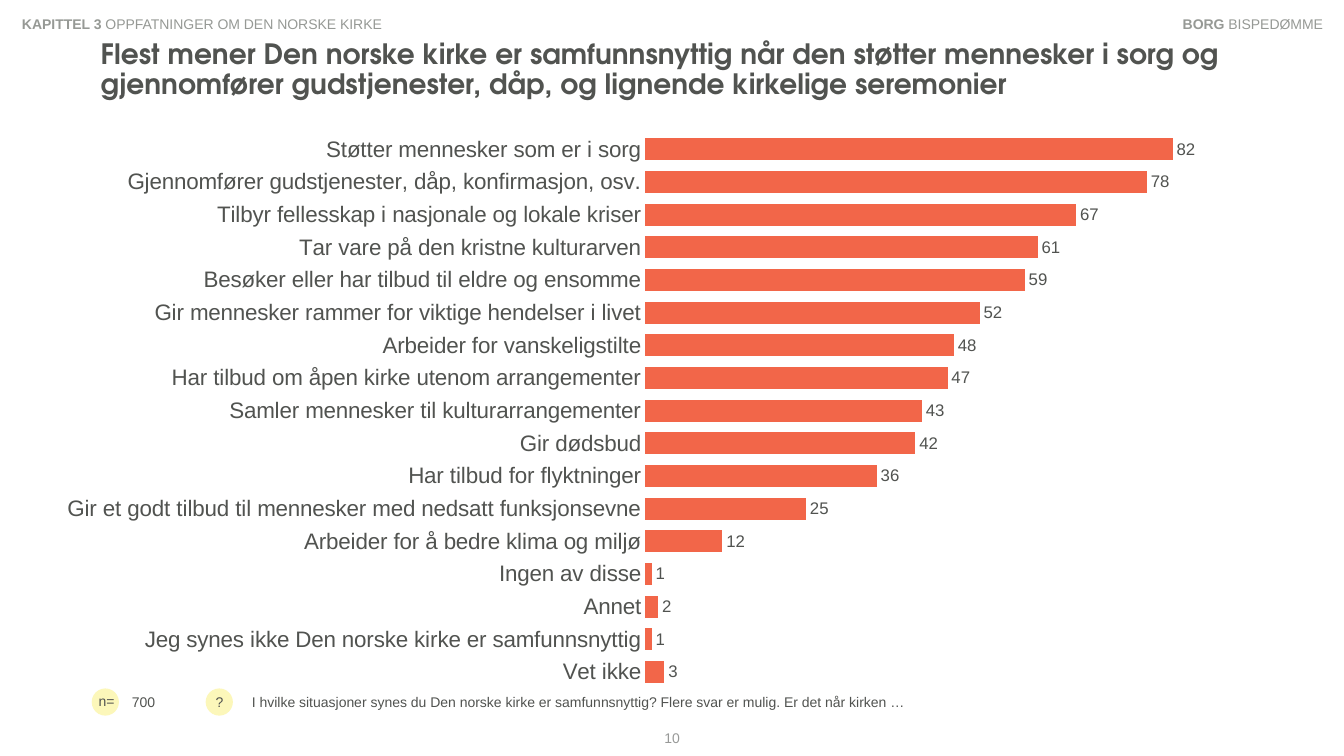
from lxml import etree
from pptx import Presentation
from pptx.chart.data import CategoryChartData as ChartData
from pptx.dml.color import RGBColor
from pptx.enum.chart import XL_CHART_TYPE as Kind, XL_LABEL_POSITION as Spot, XL_TICK_MARK as Tick
from pptx.enum.shapes import MSO_SHAPE as Shape
from pptx.enum.text import MSO_ANCHOR as Anchor, PP_ALIGN as Align
from pptx.oxml.ns import qn
from pptx.util import Inches, Pt

DARK = RGBColor(0x51, 0x53, 0x50)
GREY = RGBColor(0x96, 0x99, 0x95)
PALE = RGBColor(0x98, 0x99, 0x98)
CORAL = RGBColor(0xF2, 0x66, 0x49)
CREAM = RGBColor(0xFC, 0xF7, 0xBA)

answers = [
    ("Støtter mennesker som er i sorg", 82),
    ("Gjennomfører gudstjenester, dåp, konfirmasjon, osv.", 78),
    ("Tilbyr fellesskap i nasjonale og lokale kriser", 67),
    ("Tar vare på den kristne kulturarven", 61),
    ("Besøker eller har tilbud til eldre og ensomme", 59),
    ("Gir mennesker rammer for viktige hendelser i livet", 52),
    ("Arbeider for vanskeligstilte", 48),
    ("Har tilbud om åpen kirke utenom arrangementer", 47),
    ("Samler mennesker til kulturarrangementer", 43),
    ("Gir dødsbud", 42),
    ("Har tilbud for flyktninger", 36),
    ("Gir et godt tilbud til mennesker med nedsatt funksjonsevne", 25),
    ("Arbeider for å bedre klima og miljø", 12),
    ("Ingen av disse", 1),
    ("Annet", 2),
    ("Jeg synes ikke Den norske kirke er samfunnsnyttig", 1),
    ("Vet ikke", 3),
]

deck = Presentation()
deck.slide_width, deck.slide_height = Inches(13.33), Inches(7.5)
slide = deck.slides.add_slide(deck.slide_layouts[6])


def style(font, size, color=DARK, face="Arial", bold=False):
    font.size, font.name, font.bold = Pt(size), face, bold
    font.color.rgb = color


def write(text, left, top, width, height, lead="", size=10, color=DARK, face="Arial",
          bold=False, align=Align.LEFT, anchor=Anchor.TOP, lines=1.0):
    frame = slide.shapes.add_textbox(
        Inches(left), Inches(top), Inches(width), Inches(height)).text_frame
    frame.word_wrap = True
    frame.vertical_anchor = anchor
    para = frame.paragraphs[0]
    para.alignment, para.line_spacing = align, lines
    for part, heavy in ((lead, True), (text, bold)):
        if part:
            run = para.add_run()
            run.text = part
            style(run.font, size, color, face, heavy)


for left in (0.91, 2.04):
    dot = slide.shapes.add_shape(
        Shape.OVAL, Inches(left), Inches(6.83), Inches(0.27), Inches(0.27))
    dot.shadow.inherit = False
    dot.fill.solid()
    dot.fill.fore_color.rgb = CREAM
    dot.line.fill.background()

write("n=", 0.88, 6.82, 0.45, 0.27)
write("?", 2.04, 6.83, 0.3, 0.27)

data = ChartData(number_format="0")
data.categories = [name for name, share in answers]
data.add_series("Series 1", [share for name, share in answers])
chart = slide.shapes.add_chart(
    Kind.BAR_CLUSTERED, Inches(0.39), Inches(1.32), Inches(12.39), Inches(5.51), data).chart
chart.has_legend = chart.has_title = False
style(chart.font, 14)

names = chart.category_axis
names.reverse_order = True
names.major_tick_mark = names.minor_tick_mark = Tick.NONE
names.format.line.fill.background()
style(names.tick_labels.font, 16)

scale = chart.value_axis
scale.minimum_scale, scale.maximum_scale, scale.major_unit = 0, 100, 20
scale.has_major_gridlines = False
scale.visible = False

plot = chart.plots[0]
plot.gap_width = 50
plot.vary_by_categories = False
bars = plot.series[0]
bars.format.fill.solid()
bars.format.fill.fore_color.rgb = CORAL
labels = bars.data_labels
labels.show_value = True
labels.position = Spot.OUTSIDE_END
labels.number_format, labels.number_format_is_linked = "0", False
style(labels.font, 12)

area = chart._chartSpace.chart.plotArea
for old in area.findall(qn("c:layout")):
    area.remove(old)
layout = etree.Element(qn("c:layout"))
area.insert(0, layout)
manual = etree.SubElement(layout, qn("c:manualLayout"))
for tag, val in (("layoutTarget", "inner"), ("xMode", "edge"), ("yMode", "edge"),
                 ("x", 0.485), ("y", 0), ("w", 0.515), ("h", 1)):
    etree.SubElement(manual, qn("c:" + tag)).set("val", str(val))

write("Flest mener Den norske kirke er samfunnsnyttig når den støtter mennesker i sorg og "
      "gjennomfører gudstjenester, dåp, og lignende kirkelige seremonier",
      0.9, 0.13, 11.52, 0.92, size=20, face="TeX Gyre Adventor", bold=True,
      anchor=Anchor.BOTTOM, lines=0.9)
write("10", 6.29, 7.15, 0.75, 0.35, color=PALE, align=Align.CENTER, anchor=Anchor.MIDDLE)
write("I hvilke situasjoner synes du Den norske kirke er samfunnsnyttig? "
      "Flere svar er mulig. Er det når kirken …",
      2.4, 6.83, 9.91, 0.27, anchor=Anchor.MIDDLE)
write("700", 1.21, 6.83, 0.74, 0.27, anchor=Anchor.MIDDLE)
write("OPPFATNINGER OM DEN NORSKE KIRKE", 0.12, 0.1, 5.64, 0.27, lead="KAPITTEL 3 ", color=GREY)
write("BISPEDØMME", 11.12, 0.1, 2.1, 0.27, lead="BORG ", color=GREY, align=Align.RIGHT)

deck.save("out.pptx")
